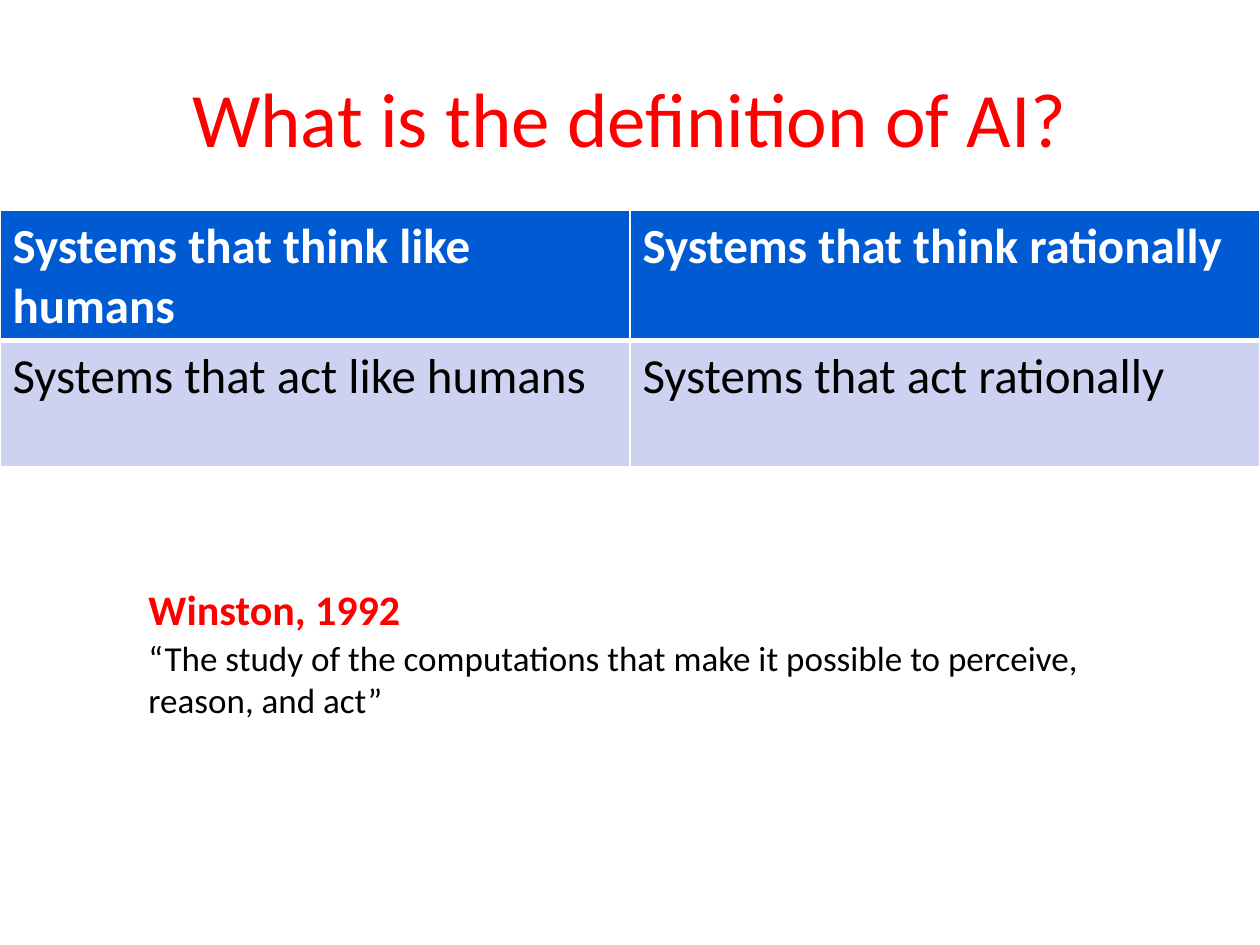
from lxml.etree import SubElement
from pptx import Presentation
from pptx.dml.color import RGBColor
from pptx.enum.text import MSO_ANCHOR, PP_ALIGN
from pptx.oxml.ns import qn
from pptx.util import Inches, Pt

RED = RGBColor(0xFF, 0x00, 0x00)
BLUE = RGBColor(0x00, 0x5B, 0xD3)
LAVENDER = RGBColor(0xCC, 0xD2, 0xEF)
WHITE = RGBColor(0xFF, 0xFF, 0xFF)
BLACK = RGBColor(0x00, 0x00, 0x00)

FONT = "Calibri"
APPROACHES = [
    ["Systems that think like humans", "Systems that think rationally"],
    ["Systems that act like humans", "Systems that act rationally"],
]


def write_text(tf, text, size=20, color=BLACK, bold=False, align=PP_ALIGN.LEFT):
    p = tf.paragraphs[0]
    p.alignment = align
    r = p.add_run()
    r.text = text
    r.font.name = FONT
    r.font.size = Pt(size)
    r.font.bold = bold
    r.font.color.rgb = color


def add_border(cell, side, width):
    """Draw a solid white line on one side (L, R, T or B) of a cell."""
    tc_pr = cell._tc.get_or_add_tcPr()
    ln = SubElement(tc_pr, qn(f"a:ln{side}"), w=str(Pt(width)))
    fill = SubElement(ln, qn("a:solidFill"))
    SubElement(fill, qn("a:srgbClr"), val=str(WHITE))


class SlideBuilder:
    """Holds the current slide and adds styled elements to it."""

    def __init__(self, prs):
        self.slide = prs.slides.add_slide(prs.slide_layouts[6])

    def text_box(self, text, left, top, width, height,
                 wrap=True, anchor=MSO_ANCHOR.TOP, **fmt):
        box = self.slide.shapes.add_textbox(
            Inches(left), Inches(top), Inches(width), Inches(height))
        tf = box.text_frame
        tf.word_wrap = wrap
        tf.vertical_anchor = anchor
        write_text(tf, text, **fmt)

    def table(self, rows, left, top, width, row_heights):
        table = self.slide.shapes.add_table(
            len(rows), len(rows[0]), Inches(left), Inches(top),
            Inches(width), Inches(sum(row_heights))).table
        for i, (texts, height) in enumerate(zip(rows, row_heights)):
            table.rows[i].height = Inches(height)
            header = i == 0
            for j, text in enumerate(texts):
                cell = table.cell(i, j)
                for side in "LRTB":
                    heavy = side == ("B" if header else "T")
                    add_border(cell, side, 3 if heavy else 1)
                cell.fill.solid()
                cell.fill.fore_color.rgb = BLUE if header else LAVENDER
                write_text(cell.text_frame, text, size=28, bold=header,
                           color=WHITE if header else BLACK)


def main():
    prs = Presentation()
    prs.slide_width, prs.slide_height = Inches(10), Inches(7.5)
    s = SlideBuilder(prs)
    s.text_box("What is the definition of AI?", 0.5, 0.3, 9, 1.25,
               anchor=MSO_ANCHOR.MIDDLE, size=44, color=RED,
               align=PP_ALIGN.CENTER)
    s.table(APPROACHES, 0, 1.67, 10, [0.97, 1])
    s.text_box("Winston, 1992", 1.08, 4.58, 2.22, 0.5, wrap=False,
               size=24, color=RED, bold=True)
    s.text_box("“The study of the computations that make it possible to "
               "perceive, reason, and act”", 1.08, 5, 8.25, 0.77)
    prs.save("out.pptx")


if __name__ == "__main__":
    main()
